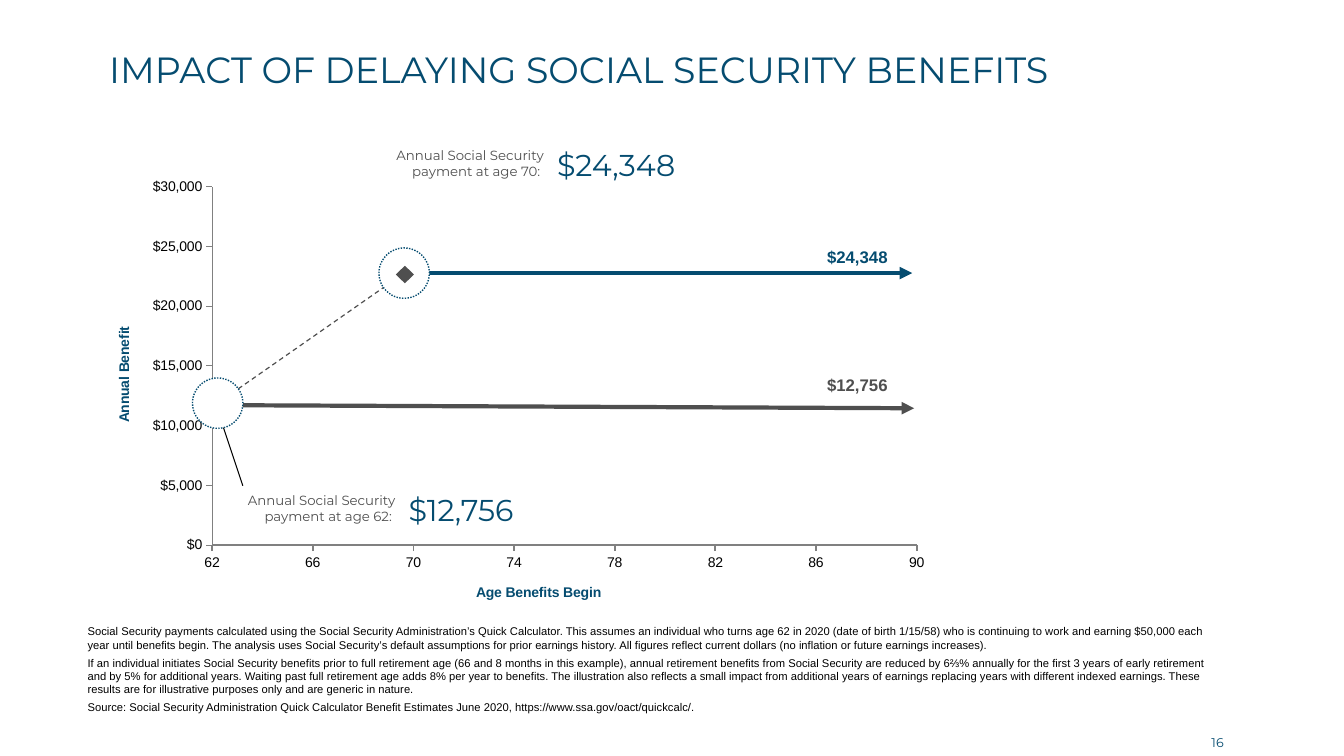
import pptx
import pptx.chart.data
import pptx.dml.color
import pptx.enum.chart
import pptx.enum.dml
import pptx.enum.shapes
import pptx.enum.text
import pptx.oxml
import pptx.oxml.ns
import pptx.util

Pt = pptx.util.Pt
SHAPE = pptx.enum.shapes.MSO_SHAPE
ALIGN = pptx.enum.text.PP_ALIGN
ANCHOR = pptx.enum.text.MSO_ANCHOR
DASH = pptx.enum.dml.MSO_LINE
qn = pptx.oxml.ns.qn

COLORS = {"navy": "054C70", "gray": "4F4F4F", "black": "000000",
          "white": "FFFFFF", "axis": "808080"}
NO_INSETS = dict.fromkeys(("margin_left", "margin_top", "margin_right", "margin_bottom"), 0)
VALUE_INSETS = dict.fromkeys(NO_INSETS, Pt(7.2))
FOOTNOTES = [
    "Social Security payments calculated using the Social Security Administration’s Quick Calculator. This assumes an individual who turns age 62 in 2020 (date of birth 1/15/58) who is continuing to work and earning $50,000 each year until benefits begin. The analysis uses Social Security’s default assumptions for prior earnings history. All figures reflect current dollars (no inflation or future earnings increases).",
    "If an individual initiates Social Security benefits prior to full retirement age (66 and 8 months in this example), annual retirement benefits from Social Security are reduced by 6⅔% annually for the first 3 years of early retirement and by 5% for additional years. Waiting past full retirement age adds 8% per year to benefits. The illustration also reflects a small impact from additional years of earnings replacing years with different indexed earnings. These results are for illustrative purposes only and are generic in nature.",
    "Source: Social Security Administration Quick Calculator Benefit Estimates June 2020, https://www.ssa.gov/oact/quickcalc/.",
]


def rgb(color):
    return pptx.dml.color.RGBColor.from_string(COLORS[color])


def set_attrs(obj, values):
    for name, value in values.items():
        setattr(obj, name, value)


def set_font(font, size, color, name="Montserrat", bold=False):
    set_attrs(font, {"size": Pt(size), "name": name, "bold": bold})
    font.color.rgb = rgb(color)


def place(sp, box):
    set_attrs(sp, dict(zip(("left", "top", "width", "height"), map(Pt, box))))


def write(sp, texts, font, frame, para):
    tf = sp.text_frame
    set_attrs(tf, {"word_wrap": True, **frame})
    for i, text in enumerate(texts):
        p = tf.add_paragraph() if i else tf.paragraphs[0]
        set_attrs(p, para)
        r = p.add_run()
        r.text = text
        set_font(r.font, *font)
    return tf


def add_text(s, box, text, font, frame, para):
    return write(s.shapes.add_textbox(*map(Pt, box)), [text], font, frame, para)


def add_line(s, start, end, color, width, dash=None, arrow=False):
    line = s.shapes.add_connector(
        pptx.enum.shapes.MSO_CONNECTOR.STRAIGHT, *map(Pt, (*start, *end)))
    line.line.color.rgb = rgb(color)
    line.line.width = Pt(width)
    if dash:
        line.line.dash_style = dash
    if arrow:
        tail = pptx.oxml.parse_xml(
            f'<a:tailEnd {pptx.oxml.ns.nsdecls("a")} type="triangle"/>')
        line.line._get_or_add_ln().append(tail)
    line._element.spPr.append(
        pptx.oxml.parse_xml(f'<a:effectLst {pptx.oxml.ns.nsdecls("a")}/>'))


def add_centered(s, kind, center, size, fill):
    x, y = center
    w, h = size
    sp = s.shapes.add_shape(kind, *map(Pt, (x - w / 2, y - h / 2, w, h)))
    sp.shadow.inherit = False
    sp.fill.solid()
    sp.fill.fore_color.rgb = rgb(fill)
    sp.line.fill.background()
    return sp


def add_title(s, box):
    sp = s.shapes.title
    place(sp, box)
    write(sp, ["IMPACT OF DELAYING SOCIAL SECURITY BENEFITS"], (26, "navy"),
          {**NO_INSETS, "vertical_anchor": ANCHOR.MIDDLE},
          {"alignment": ALIGN.LEFT, "line_spacing": 0.85})


def add_footnotes(s, box):
    sp = s.placeholders[1]
    place(sp, box)
    tf = write(sp, FOOTNOTES, (8, "black", "Arial"),
               {**NO_INSETS, "vertical_anchor": ANCHOR.BOTTOM},
               {"space_before": Pt(0), "space_after": Pt(3), "line_spacing": 1.0})
    for p in tf.paragraphs:
        pPr = p._p.get_or_add_pPr()
        pPr.set("marL", "0")
        pPr.set("indent", "0")
        pPr.append(pptx.oxml.parse_xml(f'<a:buNone {pptx.oxml.ns.nsdecls("a")}/>'))


def format_axis(axis, title, width, scale):
    set_attrs(axis, {"has_major_gridlines": False, "has_minor_gridlines": False,
                     "major_tick_mark": pptx.enum.chart.XL_TICK_MARK.OUTSIDE,
                     "minor_tick_mark": pptx.enum.chart.XL_TICK_MARK.NONE, **scale})
    axis.format.line.color.rgb = rgb("axis")
    axis.format.line.width = Pt(width)
    set_font(axis.tick_labels.font, 10, "black", "Arial")
    tf = axis.axis_title.text_frame
    tf.text = title
    set_font(tf.paragraphs[0].runs[0].font, 10, "navy", "Arial", True)


def add_benefit_chart(s, box):
    data = pptx.chart.data.XyChartData()
    series = data.add_series("Series 1")
    for age in range(62, 91):
        series.add_data_point(age, 20700)
    chart = s.shapes.add_chart(pptx.enum.chart.XL_CHART_TYPE.XY_SCATTER_LINES_NO_MARKERS,
                               *map(Pt, box), data).chart
    set_attrs(chart, {"has_title": False, "has_legend": False})
    set_font(chart.font, 10, "black", "Arial")
    plot = chart.plots[0]
    plot.vary_by_categories = False
    ser = plot.series[0]
    ser.smooth = False
    ser.marker.style = pptx.enum.chart.XL_MARKER_STYLE.NONE
    ser.format.line.fill.background()
    format_axis(chart.category_axis, "Age Benefits Begin", 1.25,
                {"minimum_scale": 62, "maximum_scale": 90, "major_unit": 4})
    format_axis(chart.value_axis, "Annual Benefit", 0.75,
                {"minimum_scale": 0, "maximum_scale": 30000, "major_unit": 5000})
    for axis, code in ((chart.category_axis, "0"), (chart.value_axis, '"$"#,##0')):
        set_attrs(axis.tick_labels, {"number_format": code, "number_format_is_linked": False})
    area = chart._chartSpace.chart.plotArea
    for old in area.findall(qn("c:layout")):
        area.remove(old)
    parts = [("layoutTarget", "inner"), ("xMode", "edge"), ("yMode", "edge"),
             ("x", 0.125), ("y", 0.107), ("w", 0.856), ("h", 0.746)]
    inner = "".join(f'<c:{tag} val="{val}"/>' for tag, val in parts)
    area.insert(0, pptx.oxml.parse_xml(
        f'<c:layout {pptx.oxml.ns.nsdecls("c")}><c:manualLayout>{inner}'
        '</c:manualLayout></c:layout>'))


def add_benefit_paths(s, box):
    x, y = box[:2]
    early, late = (x + 77.5, y + 191.5), (x + 210.7, y + 98.6)
    add_line(s, (early[0] + 1, early[1] + 8), (x + 95.5, y + 250.5), "black", 0.75)
    add_line(s, early, late, "gray", 0.85, DASH.DASH)
    for center, end, label_y, amount, color in (
            (late, (x + 573.6, y + 98.6), y + 86.7, "$24,348", "navy"),
            (early, (x + 575, y + 195.1), y + 178.2, "$12,756", "gray")):
        start = (center[0], end[1] - (2.2 if center == early else 0))
        add_line(s, start, end, color, 3, arrow=True)
        add_text(s, (x + 503.8, label_y - 13, 61.2, 26), amount, (12, color, "Arial", True),
                 {**VALUE_INSETS, "vertical_anchor": ANCHOR.MIDDLE},
                 {"alignment": ALIGN.CENTER})
        ring = add_centered(s, SHAPE.OVAL, center, (36, 36), "white")
        ring.line.color.rgb = rgb("navy")
        set_attrs(ring.line, {"width": Pt(1), "dash_style": DASH.ROUND_DOT})
    add_centered(s, SHAPE.FLOWCHART_DECISION, (late[0] + 0.5, late[1] + 1), (13, 12.5), "gray")


def add_callout(s, box, age, amount):
    x, y, w, h = box
    add_text(s, (x, y, 147, h), f"Annual Social Security payment at age {age}: ",
             (9.5, "gray"), {}, {"alignment": ALIGN.RIGHT})
    add_text(s, (x + 149.4, y + 3.2, w - 149.4, 36), amount, (21.5, "navy"),
             {**NO_INSETS, "word_wrap": False}, {"space_after": Pt(10)})


def add_page_number(s, box):
    add_text(s, box, "16", (9, "navy"), {**NO_INSETS, "vertical_anchor": ANCHOR.MIDDLE},
             {"alignment": ALIGN.CENTER})


def main():
    prs = pptx.Presentation()
    set_attrs(prs, {"slide_width": Pt(960), "slide_height": Pt(540)})
    s = prs.slides.add_slide(prs.slide_layouts[1])
    chart_box = (78, 96.5, 588, 343.5)
    add_title(s, (78, 23, 804, 58))
    add_benefit_chart(s, chart_box)
    add_benefit_paths(s, chart_box)
    add_callout(s, (142.5, 347.8, 259.5, 30), 62, "$12,756")
    add_callout(s, (248.5, 101.5, 259.5, 30), 70, "$24,348")
    add_footnotes(s, (62.6, 443.5, 804, 66.3))
    add_page_number(s, (857.5, 521.3, 24.5, 18))
    prs.save("out.pptx")


if __name__ == "__main__":
    main()
